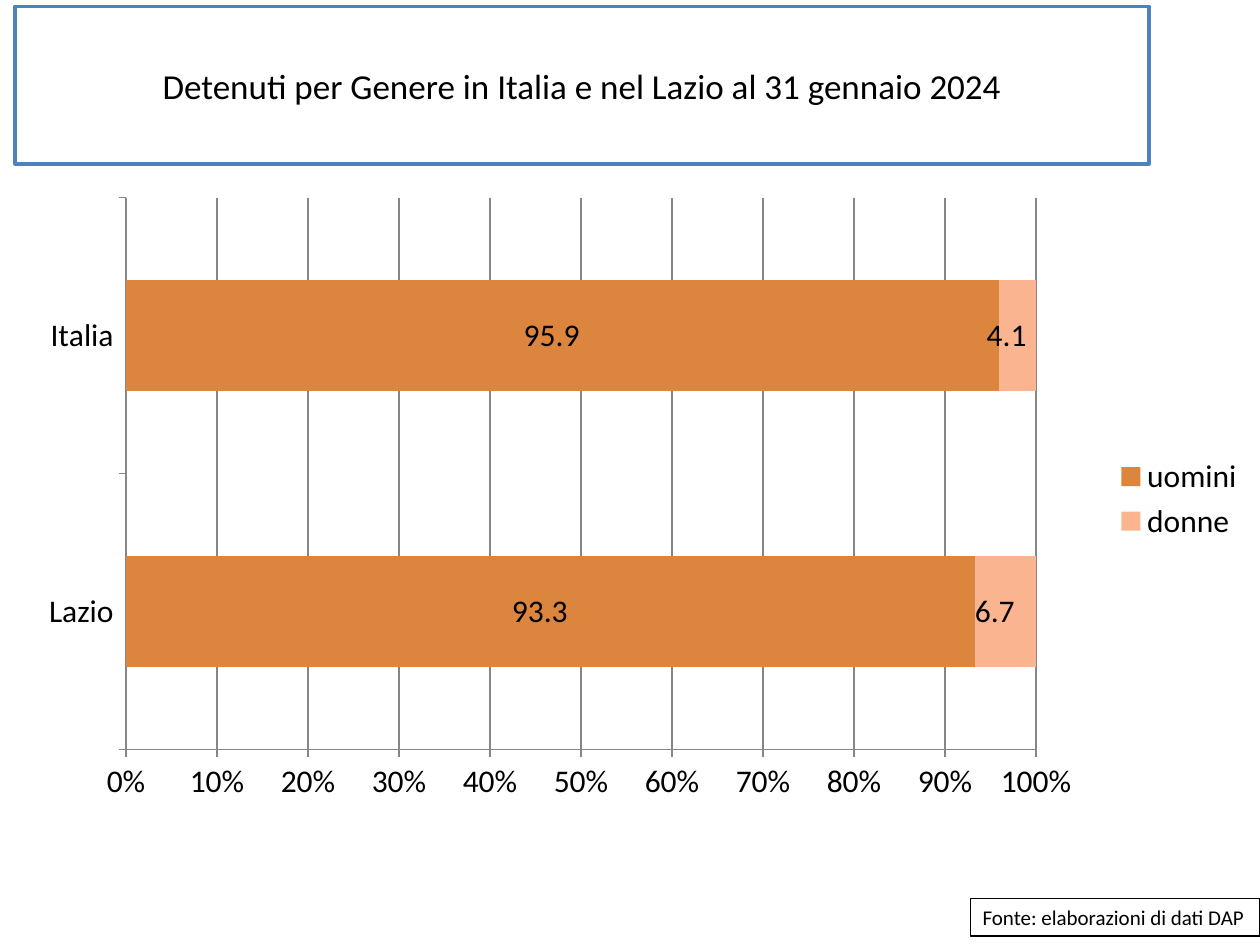
import pptx
import pptx.chart.data
import pptx.dml.color
import pptx.enum.chart
import pptx.enum.shapes
import pptx.enum.text
import pptx.oxml
import pptx.oxml.ns
import pptx.util

RGB = pptx.dml.color.RGBColor
BLACK = RGB(0x00, 0x00, 0x00)
WHITE = RGB(0xFF, 0xFF, 0xFF)
BLUE = RGB(0x4F, 0x81, 0xBD)
GREY = RGB(0x86, 0x86, 0x86)
ORANGE = RGB(0xDC, 0x85, 0x3E)
PEACH = RGB(0xFA, 0xB4, 0x90)
FONT = "Calibri"

deck = pptx.Presentation()
deck.slide_width = pptx.util.Inches(10)
deck.slide_height = pptx.util.Inches(7.5)
page = deck.slides.add_slide(deck.slide_layouts[6])


def place(left, top, width, height):
    """Turn inches into shares of the slide's size."""
    return [int(deck.slide_width * left / 10), int(deck.slide_height * top / 7.5),
            int(deck.slide_width * width / 10), int(deck.slide_height * height / 7.5)]


ALIGN = pptx.enum.text.PP_ALIGN
ANCHOR = pptx.enum.text.MSO_ANCHOR
boxes = [
    ("Detenuti per Genere in Italia e nel Lazio al 31 gennaio 2024",
     (0.12, 0.05, 9, 1.25), BLUE, 2, 20,
     {"word_wrap": True, "vertical_anchor": ANCHOR.MIDDLE}, ALIGN.CENTER),
    ("Fonte: elaborazioni di dati DAP",
     (7.7, 7.13, 2.3, 0.3), BLACK, 0.75, 12,
     {"word_wrap": False, "vertical_anchor": ANCHOR.TOP}, ALIGN.LEFT),
]
for text, area, line_color, line_width, size, frame_format, alignment in boxes:
    box = page.shapes.add_shape(pptx.enum.shapes.MSO_SHAPE.RECTANGLE, *place(*area))
    box.shadow.inherit = False
    box.fill.solid()
    box.fill.fore_color.rgb = WHITE
    box.line.color.rgb = line_color
    box.line.width = pptx.util.Pt(line_width)
    for name, value in frame_format.items():
        setattr(box.text_frame, name, value)
    para = box.text_frame.paragraphs[0]
    para.alignment = alignment
    span = para.add_run()
    span.text = text
    for name, value in {"name": FONT, "size": pptx.util.Pt(size)}.items():
        setattr(span.font, name, value)
    span.font.color.rgb = BLACK

data = pptx.chart.data.CategoryChartData()
data.categories = ["Lazio", "Italia"]
data.add_series("uomini", [93.3, 95.9])
data.add_series("donne", [6.7, 4.1])
chart = page.shapes.add_chart(pptx.enum.chart.XL_CHART_TYPE.BAR_STACKED_100,
                              *place(0.22, 1.47, 9.76, 4.98), data).chart
chart.has_title = False
chart.font.name = FONT
chart.font.size = pptx.util.Pt(18)
chart.font.color.rgb = BLACK
chart.has_legend = True
chart.legend.position = pptx.enum.chart.XL_LEGEND_POSITION.RIGHT
chart.legend.include_in_layout = False

plot = chart.plots[0]
for name, value in {"gap_width": 150, "overlap": 100, "vary_by_categories": False}.items():
    setattr(plot, name, value)

label_format = {
    "show_value": True,
    "number_format": r"_-* #,##0.0\ _€_-;\-* #,##0.0\ _€_-",
    "number_format_is_linked": False,
    "position": pptx.enum.chart.XL_LABEL_POSITION.CENTER,
}
for series, color in zip(plot.series, (ORANGE, PEACH)):
    series.format.fill.solid()
    series.format.fill.fore_color.rgb = color
    for name, value in label_format.items():
        setattr(series.data_labels, name, value)

value_axis = chart.value_axis
for axis in (chart.category_axis, value_axis):
    axis.major_tick_mark = pptx.enum.chart.XL_TICK_MARK.OUTSIDE
    axis.format.line.color.rgb = GREY
value_axis.minimum_scale = 0
value_axis.maximum_scale = 1
value_axis.major_unit = 0.1
value_axis.has_major_gridlines = True
value_axis.major_gridlines.format.line.color.rgb = GREY
value_axis.tick_labels.number_format = "0%"
value_axis.tick_labels.number_format_is_linked = False

# Fixed inner plot area, as shares of the chart frame
plot_area = chart.element.find(".//" + pptx.oxml.ns.qn("c:plotArea"))
for layout in plot_area.findall(pptx.oxml.ns.qn("c:layout")):
    plot_area.remove(layout)
shares = {"x": 0.08, "y": 0.02, "w": 0.74, "h": 0.88}
plot_area.insert(0, pptx.oxml.parse_xml(
    f'<c:layout {pptx.oxml.ns.nsdecls("c")}><c:manualLayout>'
    '<c:layoutTarget val="inner"/><c:xMode val="edge"/><c:yMode val="edge"/>'
    + "".join(f'<c:{key} val="{share}"/>' for key, share in shares.items())
    + "</c:manualLayout></c:layout>"))

deck.save("out.pptx")
